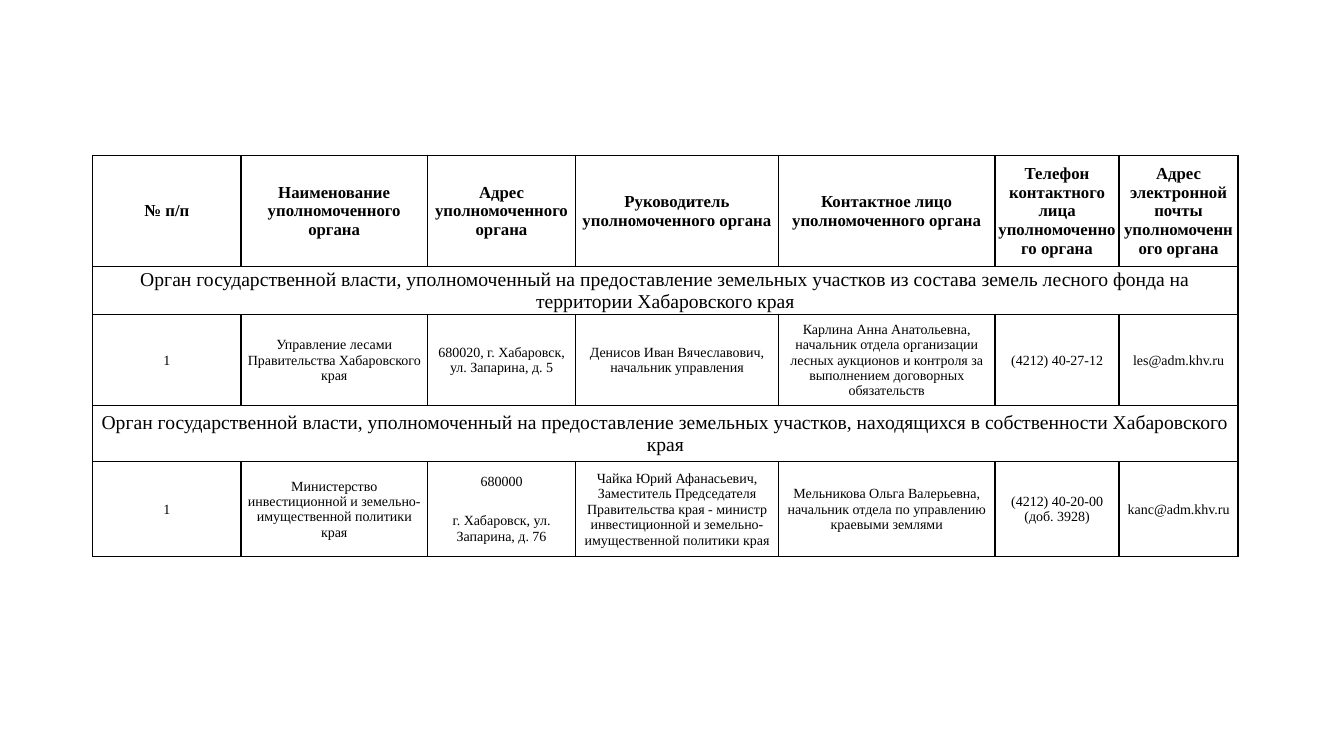
from lxml import etree
from pptx import Presentation
from pptx.dml.color import RGBColor
from pptx.enum.text import MSO_ANCHOR, PP_ALIGN
from pptx.oxml.ns import qn
from pptx.util import Inches, Pt

CENTER = PP_ALIGN.CENTER
MIDDLE = MSO_ANCHOR.MIDDLE
BLACK = RGBColor(0, 0, 0)
WHITE = RGBColor(255, 255, 255)
FONT = "Times New Roman"
HEADER_SIZE, SECTION_SIZE, BODY_SIZE = 12, 14, 10

COLUMN_WIDTHS = [1.47, 1.85, 1.47, 2.01, 2.15, 1.23, 1.18]
ROW_HEIGHTS = [1.1, 0.48, 0.9, 0.56, 0.38, 0.56]
SECTION_ROWS = (1, 3)
ADDRESS_COLUMN = 2
POSTCODE_ROW, STREET_ROW = 4, 5

CONTENT = [
    ["№ п/п", "Наименование уполномоченного органа",
     "Адрес уполномоченного органа", "Руководитель уполномоченного органа",
     "Контактное лицо уполномоченного органа",
     "Телефон контактного лица уполномоченного органа",
     "Адрес электронной почты уполномоченного органа"],
    ["Орган государственной власти, уполномоченный на предоставление земельных "
     "участков из состава земель лесного фонда на территории Хабаровского края"],
    ["1", "Управление лесами Правительства Хабаровского края",
     "680020, г. Хабаровск, ул. Запарина, д. 5",
     "Денисов Иван Вячеславович, начальник управления",
     "Карлина Анна Анатольевна, начальник отдела организации лесных аукционов "
     "и контроля за выполнением договорных обязательств",
     "(4212) 40-27-12", "les@adm.khv.ru"],
    ["Орган государственной власти, уполномоченный на предоставление земельных "
     "участков, находящихся в собственности Хабаровского края"],
    ["1", "Министерство инвестиционной и земельно-имущественной политики края",
     "680000",
     "Чайка Юрий Афанасьевич, Заместитель Председателя Правительства края - "
     "министр инвестиционной и земельно-имущественной политики края",
     "Мельникова Ольга Валерьевна, начальник отдела по управлению краевыми землями",
     "(4212) 40-20-00 (доб. 3928)", "kanc@adm.khv.ru"],
    ["", "", "г. Хабаровск, ул. Запарина, д. 76"],
]


def add_border(cell, side, visible):
    line = etree.SubElement(cell._tc.get_or_add_tcPr(), qn(f"a:ln{side}"), w=str(Pt(1)))
    if visible:
        fill = etree.SubElement(line, qn("a:solidFill"))
        etree.SubElement(fill, qn("a:srgbClr"), val=str(BLACK))
    else:
        etree.SubElement(line, qn("a:noFill"))


prs = Presentation()
prs.slide_width, prs.slide_height = Inches(13.33), Inches(7.5)
slide = prs.slides.add_slide(prs.slide_layouts[6])

authorities = slide.shapes.add_table(
    len(ROW_HEIGHTS), len(COLUMN_WIDTHS), Inches(0.92), Inches(1.54),
    Inches(sum(COLUMN_WIDTHS)), Inches(sum(ROW_HEIGHTS))).table
authorities.horz_banding = False
for column, width in zip(authorities.columns, COLUMN_WIDTHS):
    column.width = Inches(width)
for row, height in zip(authorities.rows, ROW_HEIGHTS):
    row.height = Inches(height)

for r in SECTION_ROWS:
    authorities.cell(r, 0).merge(authorities.cell(r, len(COLUMN_WIDTHS) - 1))
for c in range(len(COLUMN_WIDTHS)):
    if c != ADDRESS_COLUMN:
        authorities.cell(POSTCODE_ROW, c).merge(authorities.cell(STREET_ROW, c))

for r in range(len(ROW_HEIGHTS)):
    size = HEADER_SIZE if r == 0 else SECTION_SIZE if r in SECTION_ROWS else BODY_SIZE
    for c in range(len(COLUMN_WIDTHS)):
        cell = authorities.cell(r, c)
        # The postcode and the street read as one cell, with no line between them
        open_side = {POSTCODE_ROW: "B", STREET_ROW: "T"}.get(r) if c == ADDRESS_COLUMN else None
        for side in "LRTB":
            add_border(cell, side, side != open_side)
        cell.fill.solid()
        cell.fill.fore_color.rgb = WHITE
        cell.margin_left = cell.margin_top = cell.margin_right = Inches(0.01)
        cell.margin_bottom = 0
        cell.vertical_anchor = MIDDLE
        if cell.is_spanned:
            continue
        cell.text_frame.text = CONTENT[r][c]
        paragraph = cell.text_frame.paragraphs[0]
        paragraph.alignment = CENTER
        font = paragraph.runs[0].font
        font.name, font.size, font.bold = FONT, Pt(size), r == 0
        font.color.rgb = BLACK

prs.save("out.pptx")
